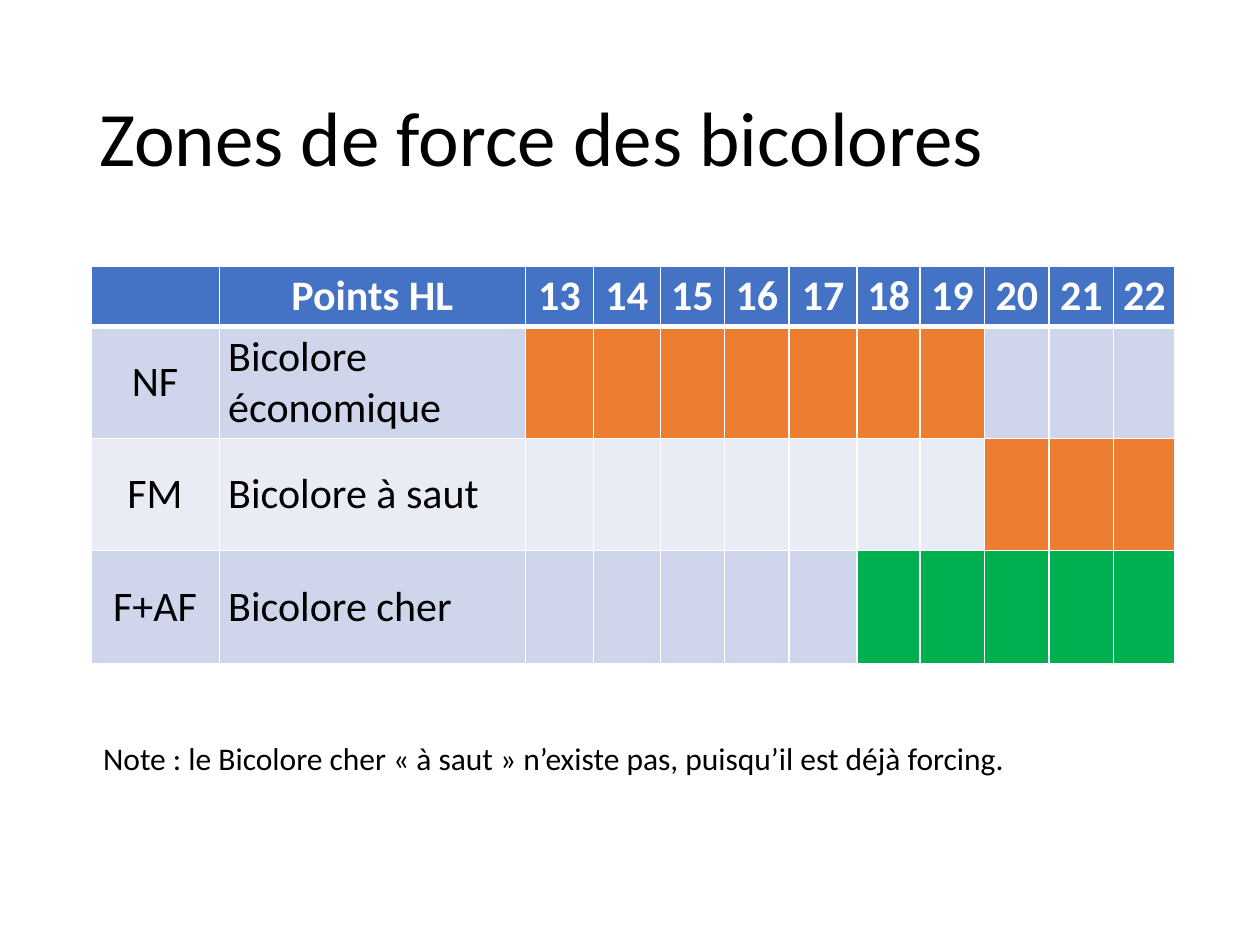
import lxml.etree
import pptx
import pptx.dml.color
import pptx.enum.text
import pptx.oxml.ns
import pptx.util

Cm, Pt = pptx.util.Cm, pptx.util.Pt
RGBColor = pptx.dml.color.RGBColor
ANCHOR = pptx.enum.text.MSO_ANCHOR
ALIGN = pptx.enum.text.PP_ALIGN

BLACK = RGBColor(0x00, 0x00, 0x00)
WHITE = RGBColor(0xFF, 0xFF, 0xFF)
BLUE = RGBColor(0x44, 0x72, 0xC4)
DARK_BAND = RGBColor(0xCF, 0xD5, 0xEA)
LIGHT_BAND = RGBColor(0xE9, 0xEB, 0xF5)
ORANGE = RGBColor(0xED, 0x7D, 0x31)
GREEN = RGBColor(0x00, 0xB0, 0x50)

POINTS = range(13, 23)
ZONES = [
    ("NF", "Bicolore économique", range(13, 20), ORANGE),
    ("FM", "Bicolore à saut", range(20, 23), ORANGE),
    ("F+AF", "Bicolore cher", range(18, 23), GREEN),
]
COLUMN_WIDTHS = [2.59, 6.17, 1.37, 1.35, 1.3, 1.3, 1.37, 1.27, 1.3, 1.3, 1.3, 1.24]
ROW_HEIGHTS = [1.22, 2.26, 2.26, 2.29]
CELL_FORMAT = {
    "vertical_anchor": ANCHOR.MIDDLE,
    "margin_left": Cm(0.18),
    "margin_right": Cm(0.18),
    "margin_top": Cm(0.1),
    "margin_bottom": Cm(0.1),
}


def apply_format(target, values):
    """Set each named attribute of the target."""
    for name, value in values.items():
        setattr(target, name, value)


def write_text(para, text, size, color, bold=False):
    """Fill a paragraph with one formatted span."""
    span = para.add_run()
    span.text = text
    apply_format(span.font, {"name": "Calibri", "size": Pt(size), "bold": bold})
    span.font.color.rgb = color


def add_text(page, box, text, size, anchor=ANCHOR.TOP, spacing=1.0):
    """Place a wrapped text box in the given box."""
    frame = page.shapes.add_textbox(*map(Cm, box)).text_frame
    apply_format(frame, {"word_wrap": True, "vertical_anchor": anchor})
    para = frame.paragraphs[0]
    para.line_spacing = spacing
    write_text(para, text, size, BLACK)


def add_borders(cell, widths):
    """Draw white borders of the given widths in points."""
    properties = cell._tc.get_or_add_tcPr()
    tag = pptx.oxml.ns.qn
    for side, width in widths.items():
        line = lxml.etree.SubElement(properties, tag(f"a:ln{side}"), w=str(Pt(width)))
        fill = lxml.etree.SubElement(line, tag("a:solidFill"))
        lxml.etree.SubElement(fill, tag("a:srgbClr"), val=str(WHITE))


def style_cell(cell, row, text, fill, centred):
    """Give a table cell its borders, fill and text."""
    header = row == 0
    add_borders(cell, {"L": 1, "R": 1, "T": 3 if row == 1 else 1, "B": 3 if header else 1})
    apply_format(cell, CELL_FORMAT)
    cell.fill.solid()
    cell.fill.fore_color.rgb = fill
    para = cell.text_frame.paragraphs[0]
    para.alignment = ALIGN.CENTER if centred else ALIGN.LEFT
    if text:
        write_text(para, text, 24, WHITE if header else BLACK, header)


def add_zone_table(page, left, top):
    """Place the table of point zones at the given corner."""
    size = (sum(COLUMN_WIDTHS), sum(ROW_HEIGHTS))
    table = page.shapes.add_table(
        len(ROW_HEIGHTS), len(COLUMN_WIDTHS), *map(Cm, (left, top, *size))
    ).table
    for column, width in zip(table.columns, COLUMN_WIDTHS):
        column.width = Cm(width)
    for row, height in zip(table.rows, ROW_HEIGHTS):
        row.height = Cm(height)
    for column, text in enumerate(["", "Points HL", *map(str, POINTS)]):
        style_cell(table.cell(0, column), 0, text, BLUE, True)
    for row, (code, label, zone, color) in enumerate(ZONES, 1):
        band = DARK_BAND if row % 2 else LIGHT_BAND
        style_cell(table.cell(row, 0), row, code, band, True)
        style_cell(table.cell(row, 1), row, label, band, False)
        for column, point in enumerate(POINTS, 2):
            fill = color if point in zone else band
            style_cell(table.cell(row, column), row, "", fill, True)


def main():
    """Build and save the deck."""
    deck = pptx.Presentation()
    apply_format(deck, {"slide_width": Cm(25.4), "slide_height": Cm(19.05)})
    page = deck.slides.add_slide(deck.slide_layouts[6])
    add_text(page, (1.75, 1.02, 21.9, 3.68), "Zones de force des bicolores", 44, ANCHOR.MIDDLE, 0.9)
    add_zone_table(page, 1.83, 5.36)
    note = "Note : le Bicolore cher « à saut » n’existe pas, puisqu’il est déjà forcing."
    add_text(page, (1.83, 14.78, 21.67, 1.02), note, 18)
    deck.save("out.pptx")


if __name__ == "__main__":
    main()
